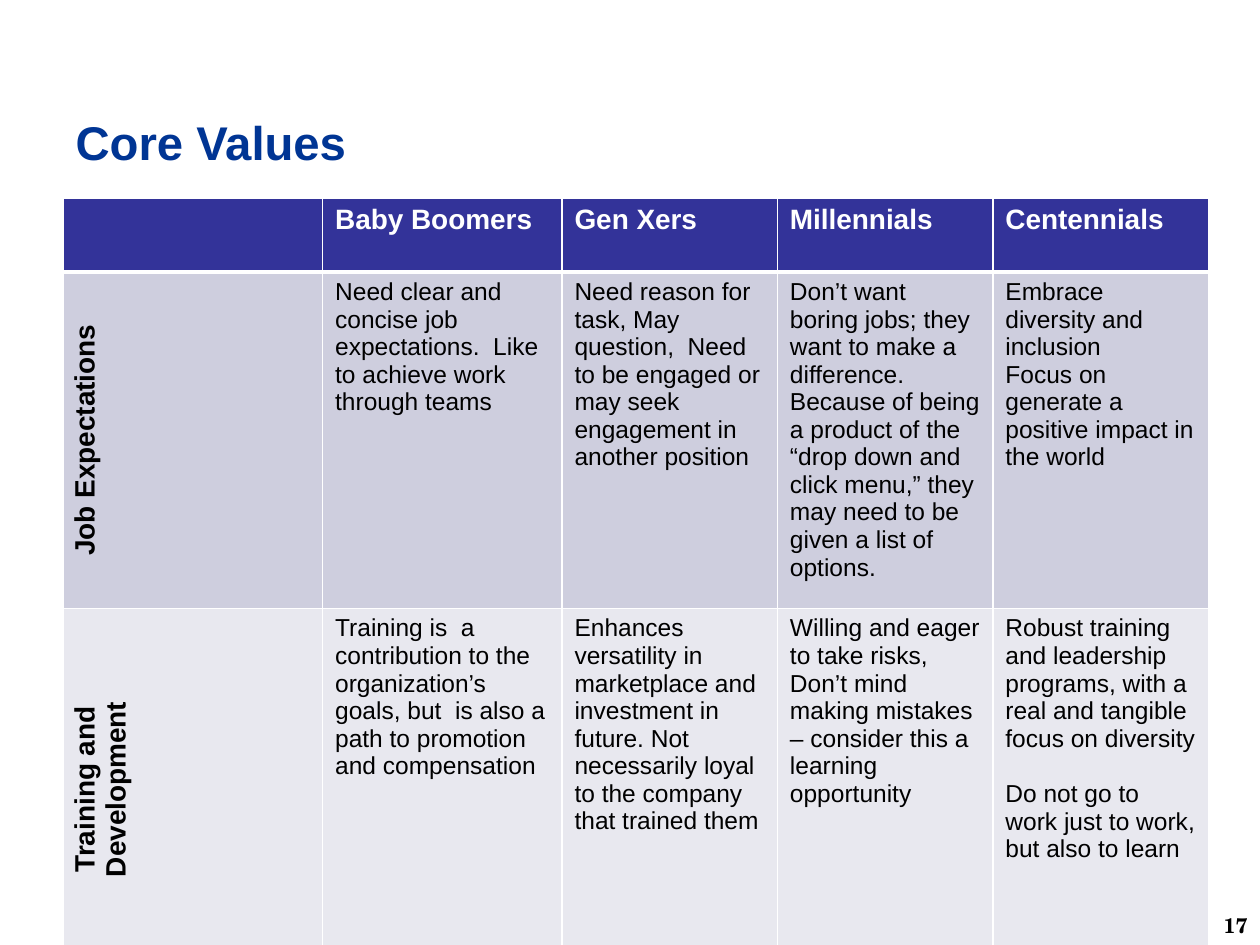
from dataclasses import dataclass

from lxml import etree
from pptx import Presentation
from pptx import util as u
from pptx.dml.color import RGBColor
from pptx.enum import text
from pptx.oxml import ns

WIDTH, HEIGHT = u.Inches(10), u.Inches(7.5)
BLUE = RGBColor(0x00, 0x35, 0x94)
INDIGO = RGBColor(0x33, 0x33, 0x99)
LILAC = RGBColor(0xCE, 0xCE, 0xDE)
MIST = RGBColor(0xE8, 0xE8, 0xEF)
WHITE = RGBColor(0xFF, 0xFF, 0xFF)
BLACK = RGBColor(0x00, 0x00, 0x00)

LEFT = 0.05
COLUMNS = (0.206, 0.19, 0.171, 0.171, 0.171)
TABLE_TOP = 0.21
HEADINGS = ("Baby Boomers", "Gen Xers", "Millennials", "Centennials")


@dataclass(frozen=True)
class Topic:
    name: str
    fill: RGBColor
    height: float
    entries: tuple[tuple[str, ...], ...]
    gap: float = 0


TOPICS = (
    Topic("Job Expectations", LILAC, 0.333, (
        ("Need clear and concise job expectations.  Like to achieve work through teams",),
        ("Need reason for task, May question,  Need to be engaged or may seek "
         "engagement in another position",),
        ("Don’t want boring jobs; they want to make a difference. Because of being "
         "a product of the “drop down and click menu,” they may need to be given "
         "a list of options.",),
        ("Embrace diversity and inclusion",
         "Focus on generate a positive impact in the world"),
    )),
    Topic("Training and Development", MIST, 0.383, (
        ("Training is  a contribution to the organization’s goals, but  is also "
         "a path to promotion and compensation",),
        ("Enhances versatility in marketplace and investment in future. Not "
         "necessarily loyal to the company that trained them",),
        ("Willing and eager to take risks, Don’t mind making mistakes – consider "
         "this a learning opportunity",),
        ("Robust training and leadership programs, with a real and tangible focus "
         "on diversity",
         "Do not go to work just to work, but also to learn"),
    ), gap=16),
)
HEADER_HEIGHT = 0.078


def across(share: float) -> int:
    return round(WIDTH * share)


def down(share: float) -> int:
    return round(HEIGHT * share)


def write(frame, *lines: str, size: float, color: RGBColor = BLACK,
          bold: bool = False, font: str = "Arial",
          align=text.PP_ALIGN.LEFT, gap: float = 0) -> None:
    for index, line in enumerate(lines):
        para = frame.add_paragraph() if index else frame.paragraphs[0]
        para.alignment = align
        if index:
            para.space_before = u.Pt(gap)
        span = para.add_run()
        span.text = line
        span.font.name = font
        span.font.size = u.Pt(size)
        span.font.bold = bold
        span.font.color.rgb = color


def place(shape, left: float, top: float, width: float, height: float) -> None:
    shape.left, shape.top = across(left), down(top)
    shape.width, shape.height = across(width), down(height)


def dress(cell, fill: RGBColor, top: float = 1, bottom: float = 1) -> None:
    properties = cell._tc.get_or_add_tcPr()
    for side, points in (("L", 1), ("R", 1), ("T", top), ("B", bottom)):
        line = etree.SubElement(properties, ns.qn(f"a:ln{side}"), w=str(u.Pt(points)))
        solid = etree.SubElement(line, ns.qn("a:solidFill"))
        etree.SubElement(solid, ns.qn("a:srgbClr"), val=str(WHITE))
    cell.fill.solid()
    cell.fill.fore_color.rgb = fill


def draw_table(page) -> None:
    heights = (HEADER_HEIGHT, *(topic.height for topic in TOPICS))
    table = page.shapes.add_table(
        len(heights), len(COLUMNS), across(LEFT), down(TABLE_TOP),
        across(sum(COLUMNS)), down(sum(heights))).table
    for column, share in zip(table.columns, COLUMNS):
        column.width = across(share)
    for row, share in zip(table.rows, heights):
        row.height = down(share)

    for index, heading in enumerate(("", *HEADINGS)):
        cell = table.cell(0, index)
        dress(cell, INDIGO, bottom=3)
        if heading:
            write(cell.text_frame, heading, size=16, color=WHITE, bold=True)

    for row, topic in enumerate(TOPICS, 1):
        top = 3 if row == 1 else 1
        label = table.cell(row, 0)
        dress(label, topic.fill, top=top)
        label._tc.get_or_add_tcPr().set("vert", "vert270")
        write(label.text_frame, topic.name, size=16, bold=True,
              align=text.PP_ALIGN.CENTER)
        for column, lines in enumerate(topic.entries, 1):
            cell = table.cell(row, column)
            dress(cell, topic.fill, top=top)
            write(cell.text_frame, *lines, size=14, gap=topic.gap)


def main() -> None:
    deck = Presentation()
    deck.slide_width, deck.slide_height = WIDTH, HEIGHT
    page = deck.slides.add_slide(deck.slide_layouts[5])

    title = page.shapes.title
    place(title, LEFT, 0.111, 0.9, 0.077)
    title.text_frame.vertical_anchor = text.MSO_ANCHOR.MIDDLE
    write(title.text_frame, "Core Values", size=27, color=BLUE, bold=True)

    number = page.shapes.add_textbox(0, 0, 0, 0)
    place(number, 0.889, 0.965, 0.111, 0.028)
    number.text_frame.word_wrap = True
    number.text_frame.vertical_anchor = text.MSO_ANCHOR.MIDDLE
    write(number.text_frame, "17", size=12, bold=True, font="TeX Gyre Schola",
          align=text.PP_ALIGN.RIGHT)

    draw_table(page)
    deck.save("out.pptx")


if __name__ == "__main__":
    main()
